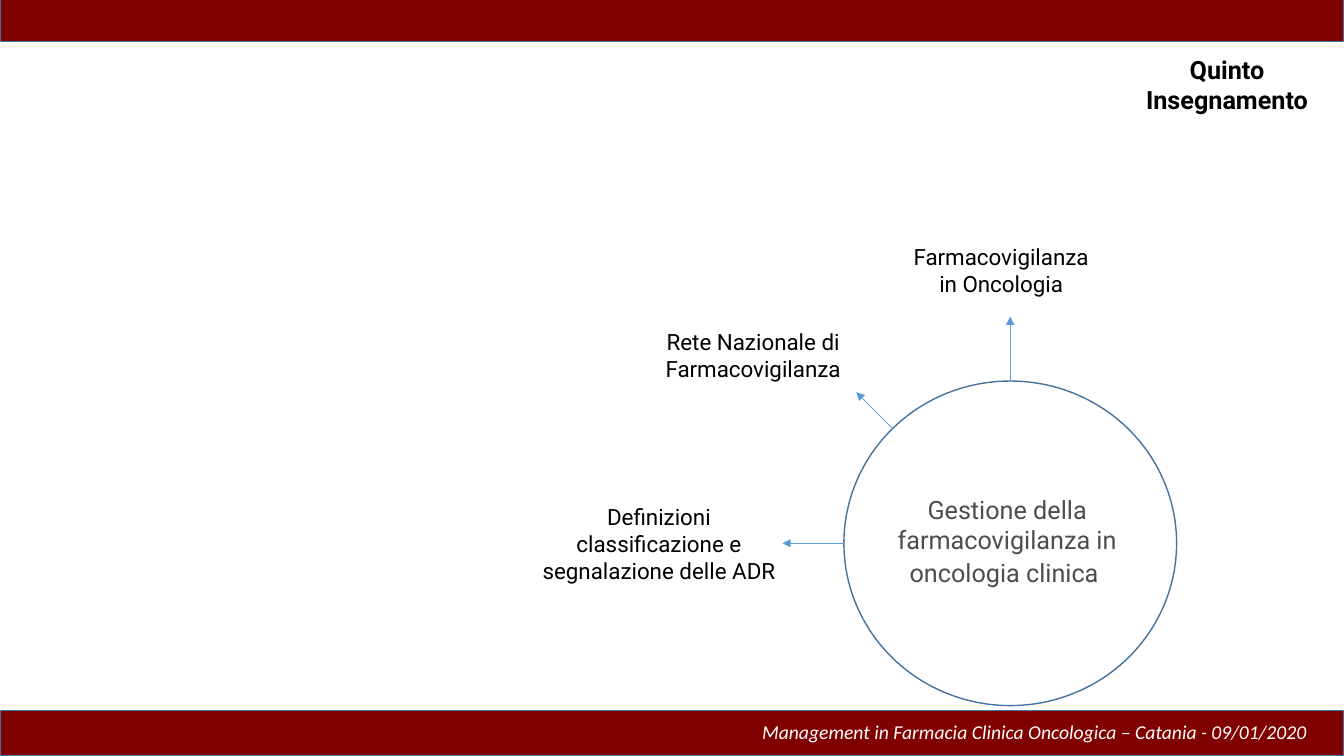
import math
import pptx
import pptx.util
import pptx.dml.color
import pptx.enum.shapes
import pptx.enum.text
import pptx.oxml
import pptx.oxml.ns

WIDTH, HEIGHT = 13.33, 7.5
COLORS = {"band": "800000", "edge": "43739E", "arrow": "5B9BD5",
          "text": "000000", "hub": "4D4D4D", "footer": "FFFFFF"}
BAND_HEIGHT = 0.45
BAND_TOPS = [HEIGHT - BAND_HEIGHT, -0.04]
CENTER, RADII = (10.02, 5.39), (1.65, 1.61)

TITLE = ["Quinto", "Insegnamento"]
TITLE_BOX = (11.01, 0.49, 2.32, 0.71)
FOOTER = "Management in Farmacia Clinica Oncologica – Catania - 09/01/2020"
FOOTER_BOX = (7.46, 7.09, 5.73, 0.34)
HUB = "Gestione della farmacovigilanza in oncologia clinica"
HUB_BOX = (8.41, 4.85, 3.16, 1.04)
TOPICS = [
    ("Definizioni classificazione e segnalazione delle ADR", (5.24, 4.94, 2.59, 0.91), 180, 0.61),
    ("Rete Nazionale di Farmacovigilanza", (6.39, 3.21, 2.16, 0.64), 135, 0.51),
    ("Farmacovigilanza in Oncologia", (8.85, 2.36, 2.16, 0.64), 90, 0.64),
]


def inches(values):
    return [pptx.util.Inches(v) for v in values]


def rgb(name):
    return pptx.dml.color.RGBColor.from_string(COLORS[name])


def style_run(r, size, color, font="Roboto", bold=False, italic=False):
    r.font.name, r.font.size = font, pptx.util.Pt(size)
    r.font.bold, r.font.italic = bold, italic
    r.font.color.rgb = rgb(color)


def add_outlined(slide, kind, box, fill=None):
    sp = slide.shapes.add_shape(kind, *inches(box))
    sp.shadow.inherit = False
    if fill:
        sp.fill.solid()
        sp.fill.fore_color.rgb = rgb(fill)
    else:
        sp.fill.background()
    sp.line.color.rgb = rgb("edge")
    sp.line.width = pptx.util.Pt(1)


def add_label(slide, text, box, size, color, centered=True, **style):
    tf = slide.shapes.add_textbox(*inches(box)).text_frame
    tf.word_wrap = True
    p = tf.paragraphs[0]
    p.text = text
    if centered:
        p.alignment = pptx.enum.text.PP_ALIGN.CENTER
    style_run(p.runs[0], size, color, **style)
    return p


def add_arrow(slide, angle, length):
    a = math.radians(angle)
    dx, dy = math.cos(a), -math.sin(a)
    x, y = CENTER[0] + RADII[0] * dx, CENTER[1] + RADII[1] * dy
    cn = slide.shapes.add_connector(
        pptx.enum.shapes.MSO_CONNECTOR.STRAIGHT,
        *inches((x, y, x + length * dx, y + length * dy)))
    cn.line.color.rgb = rgb("arrow")
    cn.line.width = pptx.util.Pt(0.5)
    tail = pptx.oxml.parse_xml(
        f'<a:tailEnd {pptx.oxml.ns.nsdecls("a")} type="triangle"/>')
    cn.line._get_or_add_ln().append(tail)
    cn._element.spPr.append(
        pptx.oxml.parse_xml(f'<a:effectLst {pptx.oxml.ns.nsdecls("a")}/>'))


def add_title(slide):
    sp = slide.shapes.title
    sp.left, sp.top, sp.width, sp.height = inches(TITLE_BOX)
    tf = sp.text_frame
    tf.text = "\n".join(TITLE)
    tf.word_wrap = True
    tf.auto_size = pptx.enum.text.MSO_AUTO_SIZE.NONE
    tf.vertical_anchor = pptx.enum.text.MSO_ANCHOR.TOP
    for p in tf.paragraphs:
        p.alignment = pptx.enum.text.PP_ALIGN.CENTER
        style_run(p.runs[0], 18, "text", bold=True)


def main():
    prs = pptx.Presentation()
    prs.slide_width, prs.slide_height = inches((WIDTH, HEIGHT))
    s = prs.slides.add_slide(prs.slide_layouts[5])
    shapes = pptx.enum.shapes.MSO_SHAPE

    for top in BAND_TOPS:
        add_outlined(s, shapes.RECTANGLE, (0, top, WIDTH, BAND_HEIGHT), "band")
    add_label(s, FOOTER, FOOTER_BOX, 14, "footer", centered=False,
              font="Calibri", italic=True)

    corner = [c - r for c, r in zip(CENTER, RADII)]
    add_outlined(s, shapes.OVAL, (*corner, *(2 * r for r in RADII)))
    p = add_label(s, HUB, HUB_BOX, 18, "hub")
    r = p.add_run()
    r.text = " "
    style_run(r, 20, "text", font="Cambria")

    for text, box, angle, length in TOPICS:
        add_arrow(s, angle, length)
        add_label(s, text, box, 16, "text")
    add_title(s)
    prs.save("out.pptx")


if __name__ == "__main__":
    main()
